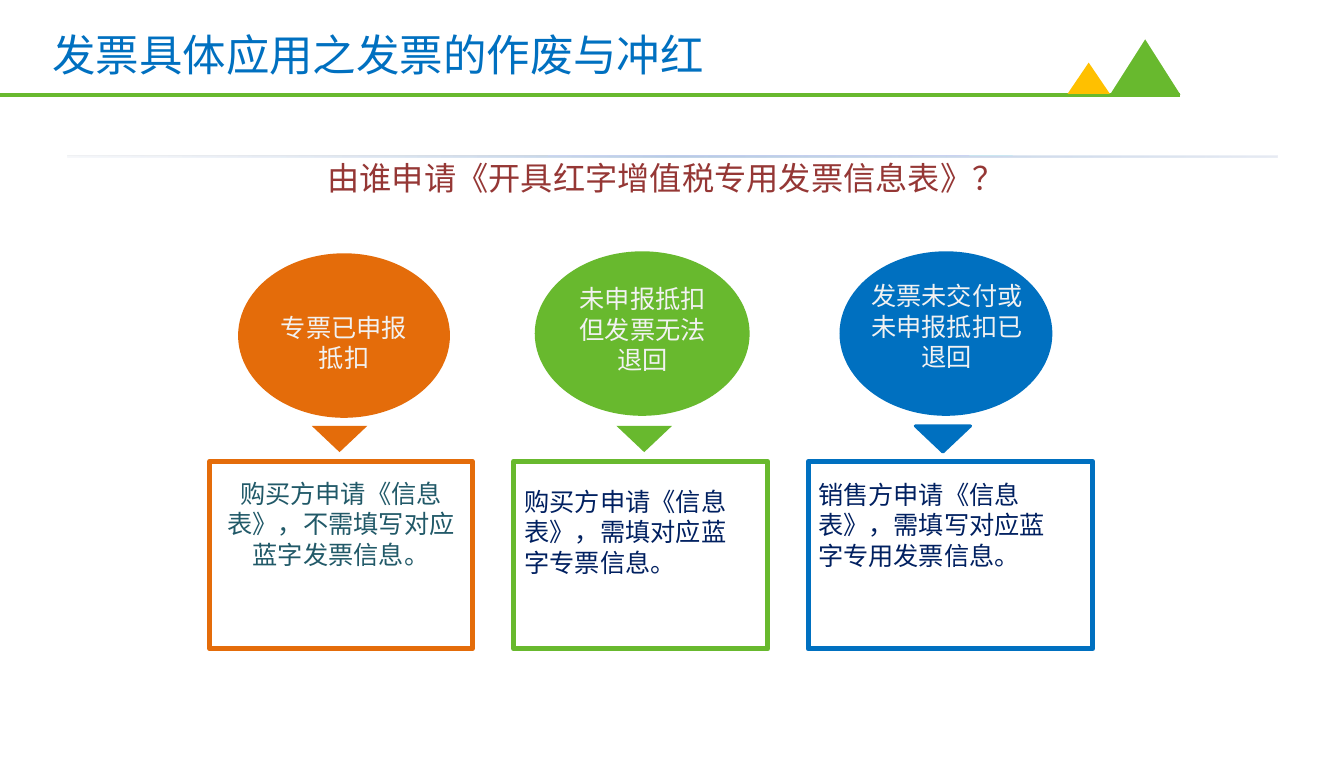
from lxml import etree
from pptx import Presentation
from pptx import util as u
from pptx.dml.color import RGBColor
from pptx.enum import shapes, text
from pptx.oxml import parse_xml
from pptx.oxml.ns import qn

FONT = "Noto Sans CJK SC"
ORANGE, GREEN, BLUE = "E46C0A", "68B92E", "0070C0"
LEFT, CENTER = text.PP_ALIGN.LEFT, text.PP_ALIGN.CENTER
KIND = shapes.MSO_SHAPE


def add_shape(kind, box, fill=None, line=None, width=0):
    sp = s.shapes.add_shape(kind, *map(u.Inches, box))
    sp.shadow.inherit = False
    for fmt, color in ((sp.fill, fill), (sp.line.fill, line)):
        if color:
            fmt.solid()
            fmt.fore_color.rgb = RGBColor.from_string(color)
        else:
            fmt.background()
    if line:
        sp.line.width = u.Pt(width)
    return sp


def add_text(box, words, size, color, align, sp=None):
    sp = sp or s.shapes.add_textbox(0, 0, 0, 0)
    sp.left, sp.top, sp.width, sp.height = map(u.Inches, box)
    tf = sp.text_frame
    tf.word_wrap = True
    tf.auto_size = text.MSO_AUTO_SIZE.NONE
    tf.vertical_anchor = text.MSO_ANCHOR.TOP
    p = tf.paragraphs[0]
    p.alignment = align
    r = p.add_run()
    r.text = words
    r.font.size = u.Pt(size)
    r.font.name = FONT
    r.font.color.rgb = RGBColor.from_string(color)
    ea = etree.SubElement(r._r.get_or_add_rPr(), qn("a:ea"))
    ea.set("typeface", FONT)


prs = Presentation()
prs.slide_width, prs.slide_height = u.Inches(13.32), u.Inches(7.5)
s = prs.slides.add_slide(prs.slide_layouts[5])

# Title
add_text((0.42, 0.23, 10.86, 0.62), "发票具体应用之发票的作废与冲红", 31, BLUE, LEFT,
         s.shapes.title)

# Header line with two hills
cx = s.shapes.add_connector(shapes.MSO_CONNECTOR.STRAIGHT, u.Inches(0), u.Inches(0.94),
                            u.Inches(11.69), u.Inches(0.94))
cx.line.color.rgb = RGBColor.from_string(GREEN)
cx.line.width = u.Pt(3)
etree.SubElement(cx._element.spPr, qn("a:effectLst"))
add_shape(KIND.ISOSCELES_TRIANGLE, (10.58, 0.62, 0.42, 0.31), "FFC000")
add_shape(KIND.ISOSCELES_TRIANGLE, (11, 0.39, 0.7, 0.55), GREEN)

# Fading rule
rule = add_shape(KIND.RECTANGLE, (0.67, 1.54, 11.99, 0.02), "D0D8E8")
stops = "".join(
    f'<a:gs pos="{pos}000"><a:srgbClr val="{color}"><a:alpha val="{alpha}000"/></a:srgbClr></a:gs>'
    for pos, color, alpha in ((0, "D0D8E8", 20), (50, "4F81BD", 40), (100, "D0D8E8", 50)))
solid = rule._element.spPr.find(qn("a:solidFill"))
solid.getparent().replace(solid, parse_xml(
    '<a:gradFill xmlns:a="http://schemas.openxmlformats.org/drawingml/2006/main">'
    f'<a:gsLst>{stops}</a:gsLst><a:lin ang="0" scaled="0"/></a:gradFill>'))

# Question
add_text((0.83, 1.52, 11.55, 0.49), "由谁申请《开具红字增值税专用发票信息表》？", 23, "953735", CENTER)

# Cases: colour, oval, its label, arrow left, frame, answer
cases = [
    (ORANGE, (2.36, 2.51, 2.1, 1.63), (2.58, 3.04, 1.66, 0.71), "专票已申报抵扣",
     3.09, (2.08, 2.6), (2.08, 4.69, 2.6, 1.01),
     "购买方申请《信息表》，不需填写对应蓝字发票信息。", "215968", CENTER),
    (GREEN, (5.3, 2.49, 2.13, 1.63), (5.53, 2.76, 1.68, 1.01), "未申报抵扣但发票无法退回",
     6.11, (5.09, 2.52), (5.1, 4.77, 2.3, 1.01),
     "购买方申请《信息表》，需填对应蓝字专票信息。", "002060", LEFT),
    (BLUE, (8.32, 2.49, 2.11, 1.63), (8.44, 2.73, 1.89, 1.01), "发票未交付或未申报抵扣已退回",
     9.07, (8.01, 2.82), (8.01, 4.7, 2.6, 1.01),
     "销售方申请《信息表》，需填写对应蓝字专用发票信息。", "002060", LEFT),
]
for (color, oval, label_box, label, arrow_x, (frame_x, frame_w),
     answer_box, answer, answer_color, align) in cases:
    add_shape(KIND.OVAL, oval, color)
    add_text(label_box, label, 18, "F2F2F2", CENTER)
    add_shape(KIND.FLOWCHART_MERGE, (arrow_x, 4.22, 0.55, 0.26), color,
              BLUE if color == BLUE else None, 2)
    add_shape(KIND.RECTANGLE, (frame_x, 4.57, frame_w, 1.86), None, color, 3.5)
    add_text(answer_box, answer, 18, answer_color, align)

prs.save("out.pptx")
